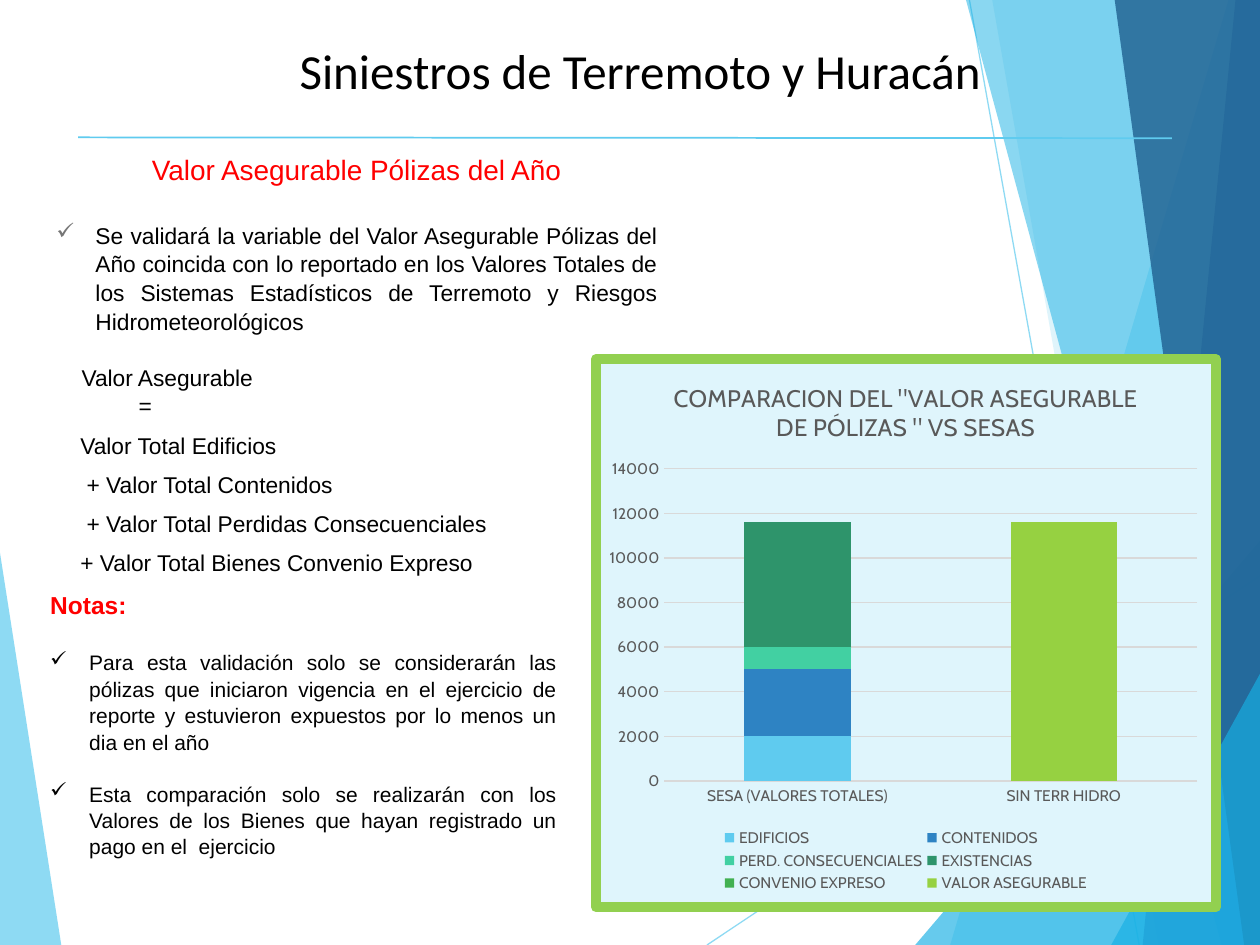
from pptx import Presentation
from pptx.chart.data import CategoryChartData
from pptx.dml.color import RGBColor
from pptx.enum.chart import XL_CHART_TYPE as ChartType, XL_LEGEND_POSITION as LegendPosition
from pptx.enum.chart import XL_TICK_MARK as TickMark
from pptx.enum.shapes import MSO_CONNECTOR as Connector
from pptx.enum.text import MSO_AUTO_SIZE as AutoSize, PP_ALIGN as Align
from pptx.oxml import parse_xml
from pptx.oxml.ns import nsdecls, qn
from pptx.util import Pt

WIDTH, HEIGHT = 720, 540
COLORS = {
    "black": "000000", "red": "FF0000", "gray": "595959", "bullet": "767676",
    "grid": "D9D9D9", "sky": "5FCBEF", "cyan": "17B0E4", "blue": "2E83C3",
    "navy": "226292", "mint": "42D0A2", "teal": "2E946B", "green": "42B051",
    "lime": "96D141", "frame": "92D050", "pale": "DFF5FC",
}


def rgb(name):
    return RGBColor.from_string(COLORS[name])


def set_opacity(shape, percent):
    color = shape._element.find(".//" + qn("a:srgbClr"))
    color.append(parse_xml(f'<a:alpha {nsdecls("a")} val="{percent * 1000}"/>'))


def set_layout(element, x, y, w, h, inner=False):
    """Place a chart part by fractions of the chart's size."""
    target = '<c:layoutTarget val="inner"/>' if inner else ""
    sizes = "".join(f'<c:{key} val="{value}"/>' for key, value in zip("xywh", (x, y, w, h)))
    layout = parse_xml(
        f'<c:layout {nsdecls("c")}><c:manualLayout>{target}<c:xMode val="edge"/>'
        f'<c:yMode val="edge"/>{sizes}</c:manualLayout></c:layout>')
    previous = element.find(qn("c:layout"))
    if previous is not None:
        element.remove(previous)
    legend_position = element.find(qn("c:legendPos"))
    element.insert(0 if legend_position is None else 1, layout)


class SlideBuilder:
    text_font = "Arial"
    chart_font = "Cabin"

    def __init__(self, slide):
        self.slide = slide
        self.shapes = slide.shapes

    def polygon(self, points, color, opacity):
        corners = [(Pt(x), Pt(y)) for x, y in points]
        builder = self.shapes.build_freeform(*corners[0])
        builder.add_line_segments(corners[1:], close=True)
        shape = builder.convert_to_shape()
        shape.shadow.inherit = False
        shape.fill.solid()
        shape.fill.fore_color.rgb = rgb(color)
        shape.line.fill.background()
        set_opacity(shape, opacity)

    def right_band(self, top, bottom, color, opacity):
        """Fill from a slanted edge to the right side of the slide."""
        self.polygon([(top, 0), (bottom, HEIGHT), (WIDTH, HEIGHT), (WIDTH, 0)], color, opacity)

    def corner(self, left, top, color, opacity):
        self.polygon([(left, HEIGHT), (WIDTH, top), (WIDTH, HEIGHT)], color, opacity)

    def line(self, start, end, width, opacity=100):
        line = self.shapes.add_connector(Connector.STRAIGHT, *map(Pt, start + end))
        line.line.color.rgb = rgb("sky")
        line.line.width = Pt(width)
        line._element.spPr.append(parse_xml(f'<a:effectLst {nsdecls("a")}/>'))
        set_opacity(line, opacity)

    def text_box(self, left, top, width, height):
        frame = self.shapes.add_textbox(*map(Pt, (left, top, width, height))).text_frame
        frame.word_wrap = True
        frame.auto_size = AutoSize.SHAPE_TO_FIT_TEXT
        return frame

    def paragraph(self, frame, text, size, color="black", align=Align.JUSTIFY, before=0,
                  indent=0, bullet=None, bold=False, font=None):
        first = frame.paragraphs[0]
        paragraph = frame.add_paragraph() if first.runs else first
        paragraph.alignment = align
        paragraph.line_spacing = 1.05
        paragraph.space_before = Pt(before)
        properties = paragraph._p.get_or_add_pPr()
        properties.set("marL", str(Pt(indent)))
        if bullet:
            properties.set("indent", str(-Pt(indent)))
            properties.append(parse_xml(
                f'<a:buClr {nsdecls("a")}><a:srgbClr val="{COLORS[bullet]}"/></a:buClr>'))
            properties.append(parse_xml(f'<a:buChar {nsdecls("a")} char="✓"/>'))
        run = paragraph.add_run()
        run.text = text
        self.style(run.font, size, color, font or self.text_font)
        run.font.bold = bold

    def style(self, font, size, color, name):
        font.size = Pt(size)
        font.name = name
        font.color.rgb = rgb(color)

    def stacked_chart(self, box, title, categories, series):
        """Draw stacked columns; series holds (name, values, color)."""
        data = CategoryChartData()
        data.categories = categories
        for name, values, _ in series:
            data.add_series(name, values)
        chart = self.shapes.add_chart(ChartType.COLUMN_STACKED, *map(Pt, box), data).chart
        self.style(chart.font, 10, "black", self.chart_font)

        chart.has_title = True
        run = chart.chart_title.text_frame.paragraphs[0].add_run()
        run.text = title
        self.style(run.font, 14, "gray", self.chart_font)
        run.font.bold = False

        plot = chart.plots[0]
        plot.gap_width, plot.overlap, plot.vary_by_categories = 150, 100, False
        for item, (_, _, color) in zip(plot.series, series):
            item.format.fill.solid()
            item.format.fill.fore_color.rgb = rgb(color)

        for axis in (chart.category_axis, chart.value_axis):
            axis.major_tick_mark = axis.minor_tick_mark = TickMark.NONE
            axis.format.line.fill.background()
            self.style(axis.tick_labels.font, 9, "gray", self.chart_font)
        values_axis = chart.value_axis
        values_axis.minimum_scale, values_axis.maximum_scale = 0, 14000
        values_axis.major_unit = 2000
        values_axis.major_gridlines.format.line.color.rgb = rgb("grid")
        values_axis.major_gridlines.format.line.width = Pt(0.75)

        chart.has_legend = True
        legend = chart.legend
        legend.position = LegendPosition.BOTTOM
        legend.include_in_layout = False
        self.style(legend.font, 9, "gray", self.chart_font)
        set_layout(legend._element, 0.2, 0.85, 0.6, 0.13)

        space = chart._chartSpace
        set_layout(space.chart.plotArea, 0.11, 0.2, 0.86, 0.57, inner=True)
        space.chart.addnext(parse_xml(
            f'<c:spPr {nsdecls("c", "a")}><a:solidFill><a:srgbClr val="{COLORS["pale"]}"/>'
            f'</a:solidFill><a:ln w="{Pt(6)}"><a:solidFill><a:srgbClr val="{COLORS["frame"]}"/>'
            '</a:solidFill><a:round/></a:ln></c:spPr>'))


def draw_background(builder):
    builder.polygon([(0, 316), (35, HEIGHT), (0, HEIGHT)], "sky", 70)
    builder.line((404, HEIGHT), (WIDTH, 329), 0.75, 70)
    builder.line((554, 0), (651, HEIGHT), 0.75, 70)
    builder.right_band(702, 543, "sky", 36)
    builder.right_band(567, 662, "sky", 20)
    builder.corner(523, 309, "cyan", 66)
    builder.right_band(552, 698, "cyan", 50)
    builder.right_band(706, 653, "blue", 70)
    builder.right_band(637, 711, "navy", 82)
    builder.corner(635, 385, "cyan", 66)


def main():
    presentation = Presentation()
    presentation.slide_width, presentation.slide_height = Pt(WIDTH), Pt(HEIGHT)
    builder = SlideBuilder(presentation.slides.add_slide(presentation.slide_layouts[6]))
    draw_background(builder)

    title = builder.text_box(101.5, 18, 528.5, 41)
    builder.paragraph(title, "Siniestros de Terremoto y Huracán", 28,
                      align=Align.CENTER, font="Calibri")
    builder.line((44.6, 78.5), (669.6, 79), 1)

    body = builder.text_box(25.2, 82.8, 357.1, 243.4)
    builder.paragraph(body, "Valor Asegurable Pólizas del Año", 16, "red", Align.CENTER)
    builder.paragraph(
        body, "Se validará la variable del Valor Asegurable Pólizas del Año coincida con lo "
        "reportado en los Valores Totales de los Sistemas Estadísticos de Terremoto y Riesgos "
        "Hidrometeorológicos", 13, before=19.3, indent=22.3, bullet="bullet")
    for text, before, indent in (
            ("Valor Asegurable", 15.6, 14.4),
            ("=", 0, 47),
            ("Valor Total Edificios", 6, 13.7),
            ("+ Valor Total Contenidos", 6, 17.3),
            ("+ Valor Total Perdidas Consecuenciales", 6, 17.3),
            ("+ Valor Total Bienes Convenio Expreso", 6, 13.7)):
        builder.paragraph(body, text, 13, before=before, indent=indent)

    builder.stacked_chart(
        (337.7, 202.3, 360, 319), 'COMPARACION DEL "VALOR ASEGURABLE DE PÓLIZAS " VS SESAS',
        ["SESA (VALORES TOTALES)", "SIN TERR HIDRO"],
        [("EDIFICIOS", (2000, None), "sky"),
         ("CONTENIDOS", (3000, None), "blue"),
         ("PERD. CONSECUENCIALES", (1000, None), "mint"),
         ("EXISTENCIAS", (5600, None), "teal"),
         ("CONVENIO EXPRESO", (None, None), "green"),
         ("VALOR ASEGURABLE", (None, 11600), "lime")])

    notes = builder.text_box(21.6, 332.6, 303.8, 157.7)
    builder.paragraph(notes, "Notas:", 14, "red", Align.LEFT, bold=True)
    for text, before in (
            ("Para esta validación solo se considerarán las pólizas que iniciaron vigencia en el "
             "ejercicio de reporte y estuvieron expuestos por lo menos un dia en el año", 16.9),
            ("Esta comparación solo se realizarán con los Valores de los Bienes que hayan "
             "registrado un pago en el  ejercicio", 14.5)):
        builder.paragraph(notes, text, 12, before=before, indent=22.3, bullet="black")

    presentation.save("out.pptx")


if __name__ == "__main__":
    main()
